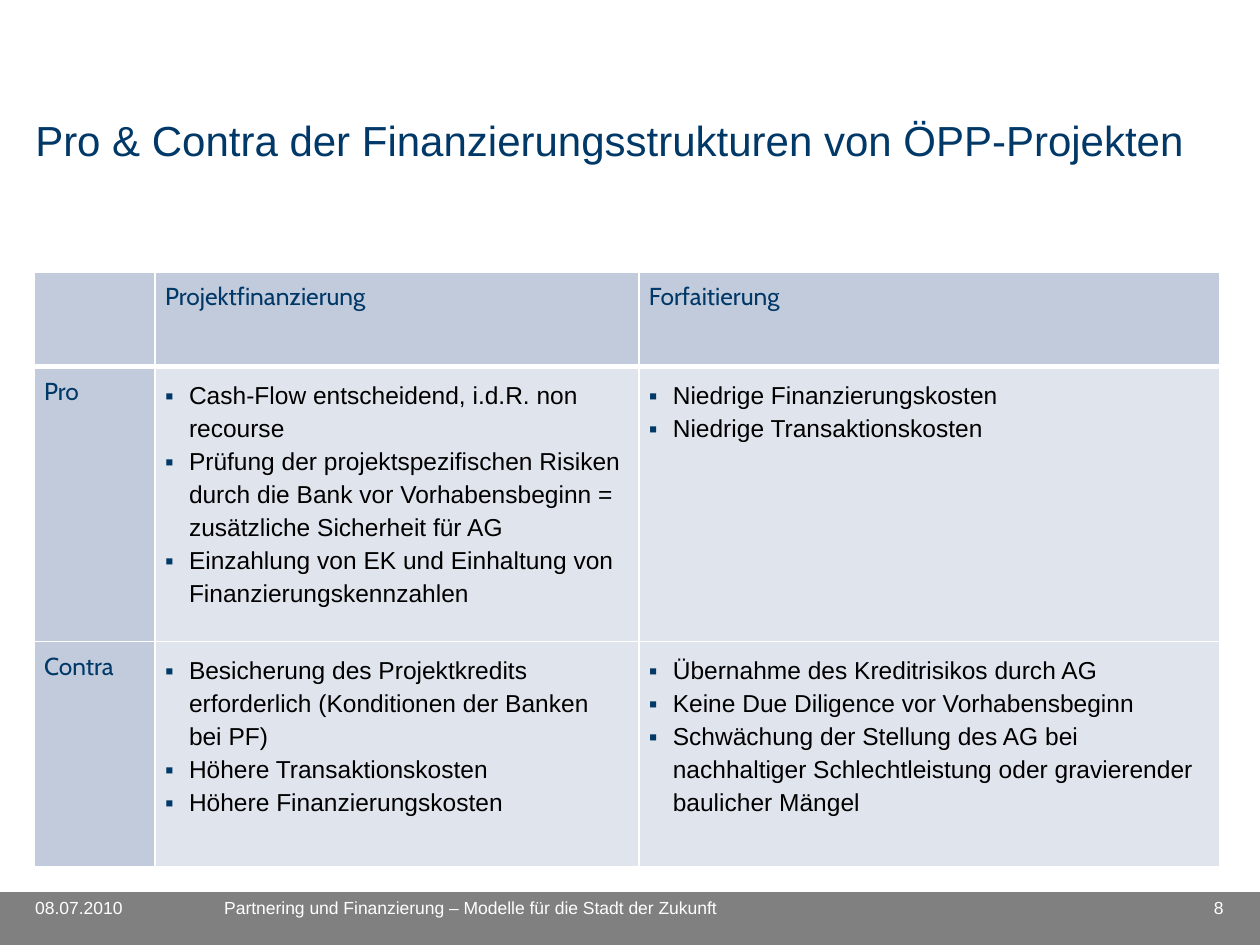
from lxml import etree
from pptx import Presentation
from pptx import util as u
from pptx.dml.color import RGBColor
from pptx.enum import shapes, text
from pptx.oxml.ns import qn

NAVY = RGBColor(0x00, 0x38, 0x67)
BLACK = RGBColor(0x00, 0x00, 0x00)
WHITE = RGBColor(0xFF, 0xFF, 0xFF)
GREY = RGBColor(0x80, 0x80, 0x80)
HEAD_FILL = RGBColor(0xC2, 0xCB, 0xDC)
BODY_FILL = RGBColor(0xE0, 0xE4, 0xED)

TITLE = dict(name="Arial", size=u.Pt(24), bold=False)
LABEL = dict(name="Cabin", size=u.Pt(14), bold=False)
BODY = dict(name="Arial", size=u.Pt(14), bold=False)
FOOTER = dict(name="Arial", size=u.Pt(10), bold=False)

ROWS = [
    ["", "Projektfinanzierung", "Forfaitierung"],
    ["Pro",
     ["Cash-Flow entscheidend, i.d.R. non recourse",
      "Prüfung der projektspezifischen Risiken durch die Bank vor "
      "Vorhabensbeginn = zusätzliche Sicherheit für AG",
      "Einzahlung von EK und Einhaltung von Finanzierungskennzahlen"],
     ["Niedrige Finanzierungskosten",
      "Niedrige Transaktionskosten"]],
    ["Contra",
     ["Besicherung des Projektkredits erforderlich "
      "(Konditionen der Banken bei PF)",
      "Höhere Transaktionskosten",
      "Höhere Finanzierungskosten"],
     ["Übernahme des Kreditrisikos durch AG",
      "Keine Due Diligence vor Vorhabensbeginn",
      "Schwächung der Stellung des AG bei nachhaltiger "
      "Schlechtleistung oder gravierender baulicher Mängel"]],
]


class Deck:
    """Holds the style and the current slide; one grid unit is one inch."""

    cols, rows = 10, 7.5

    def __init__(self):
        self.prs = Presentation()
        self.prs.slide_width = u.Inches(self.cols)
        self.prs.slide_height = u.Inches(self.rows)
        self.s = self.prs.slides.add_slide(self.prs.slide_layouts[5])

    def box(self, col, row, width, height):
        w, h = self.prs.slide_width, self.prs.slide_height
        return (int(w * col / self.cols), int(h * row / self.rows),
                int(w * width / self.cols), int(h * height / self.rows))

    def add_words(self, p, words, style, color, align=text.PP_ALIGN.LEFT):
        p.alignment = align
        r = p.add_run()
        r.text = words
        for key, value in style.items():
            setattr(r.font, key, value)
        r.font.color.rgb = color

    def frame(self, tf):
        tf.word_wrap = True
        tf.auto_size = text.MSO_AUTO_SIZE.NONE
        tf.vertical_anchor = text.MSO_ANCHOR.TOP
        for side in ("left", "top", "right", "bottom"):
            setattr(tf, f"margin_{side}", 0)
        return tf.paragraphs[0]

    def title(self, words, *place):
        sp = self.s.shapes.title
        sp.left, sp.top, sp.width, sp.height = self.box(*place)
        self.add_words(self.frame(sp.text_frame), words, TITLE, NAVY)

    def band(self, color, *place):
        sp = self.s.shapes.add_shape(shapes.MSO_SHAPE.RECTANGLE, *self.box(*place))
        sp.shadow.inherit = False
        sp.fill.solid()
        sp.fill.fore_color.rgb = color
        sp.line.fill.background()

    def note(self, words, *place, align=text.PP_ALIGN.LEFT):
        sp = self.s.shapes.add_textbox(*self.box(*place))
        self.add_words(self.frame(sp.text_frame), words, FOOTER, WHITE, align)

    def bullet(self, p, words):
        p.line_spacing = 1.2
        pPr = p._p.get_or_add_pPr()
        pPr.set("marL", str(u.Inches(0.19)))
        pPr.set("indent", str(-u.Inches(0.19)))
        color = etree.SubElement(pPr, qn("a:buClr"))
        etree.SubElement(color, qn("a:srgbClr"), val=str(NAVY))
        etree.SubElement(pPr, qn("a:buFont"), typeface="Arial")
        etree.SubElement(pPr, qn("a:buChar"), char="▪")
        self.add_words(p, words, BODY, BLACK)

    def borders(self, cell, widths):
        tcPr = cell._tc.get_or_add_tcPr()
        for side, width in zip("LRTB", widths):
            ln = etree.SubElement(tcPr, qn(f"a:ln{side}"), w=str(u.Pt(width)))
            fill = etree.SubElement(ln, qn("a:solidFill"))
            etree.SubElement(fill, qn("a:srgbClr"), val=str(WHITE))

    def table(self, data, widths, heights, col, row):
        place = self.box(col, row, sum(widths), sum(heights))
        tbl = self.s.shapes.add_table(len(heights), len(widths), *place).table
        tbl.first_row = tbl.horz_banding = False
        for column, width in zip(tbl.columns, widths):
            column.width = u.Inches(width)
        for line, height in zip(tbl.rows, heights):
            line.height = u.Inches(height)
        for i, line in enumerate(data):
            for j, content in enumerate(line):
                self.cell(tbl.cell(i, j), content, i, j)

    def cell(self, cell, content, i, j):
        # The rule below the header row is the heavy one
        self.borders(cell, (1, 1, 3 if i == 1 else 1, 3 if i == 0 else 1))
        cell.fill.solid()
        cell.fill.fore_color.rgb = BODY_FILL if i and j else HEAD_FILL
        for side in ("left", "top", "right", "bottom"):
            setattr(cell, f"margin_{side}", u.Inches(0.08))
        tf = cell.text_frame
        if isinstance(content, list):
            for k, words in enumerate(content):
                self.bullet(tf.add_paragraph() if k else tf.paragraphs[0], words)
        elif content:
            self.add_words(tf.paragraphs[0], content, LABEL, NAVY)


def main():
    deck = Deck()

    # Footer band and title
    deck.band(GREY, 0, 7.08, 10, 0.42)
    deck.title("Pro & Contra der Finanzierungsstrukturen von ÖPP-Projekten",
               0.28, 0.91, 9.41, 1.06)

    # Comparison table
    deck.table(ROWS, (0.96, 3.84, 4.61), (0.75, 2.18, 1.79), 0.27, 2.16)

    # Footer texts
    deck.note("8", 8.96, 7.12, 0.75, 0.33, align=text.PP_ALIGN.RIGHT)
    deck.note("08.07.2010", 0.28, 7.12, 1.33, 0.33)
    deck.note("Partnering und Finanzierung – Modelle für die Stadt der Zukunft",
              1.78, 7.12, 6.97, 0.33)

    deck.prs.save("out.pptx")


if __name__ == "__main__":
    main()
